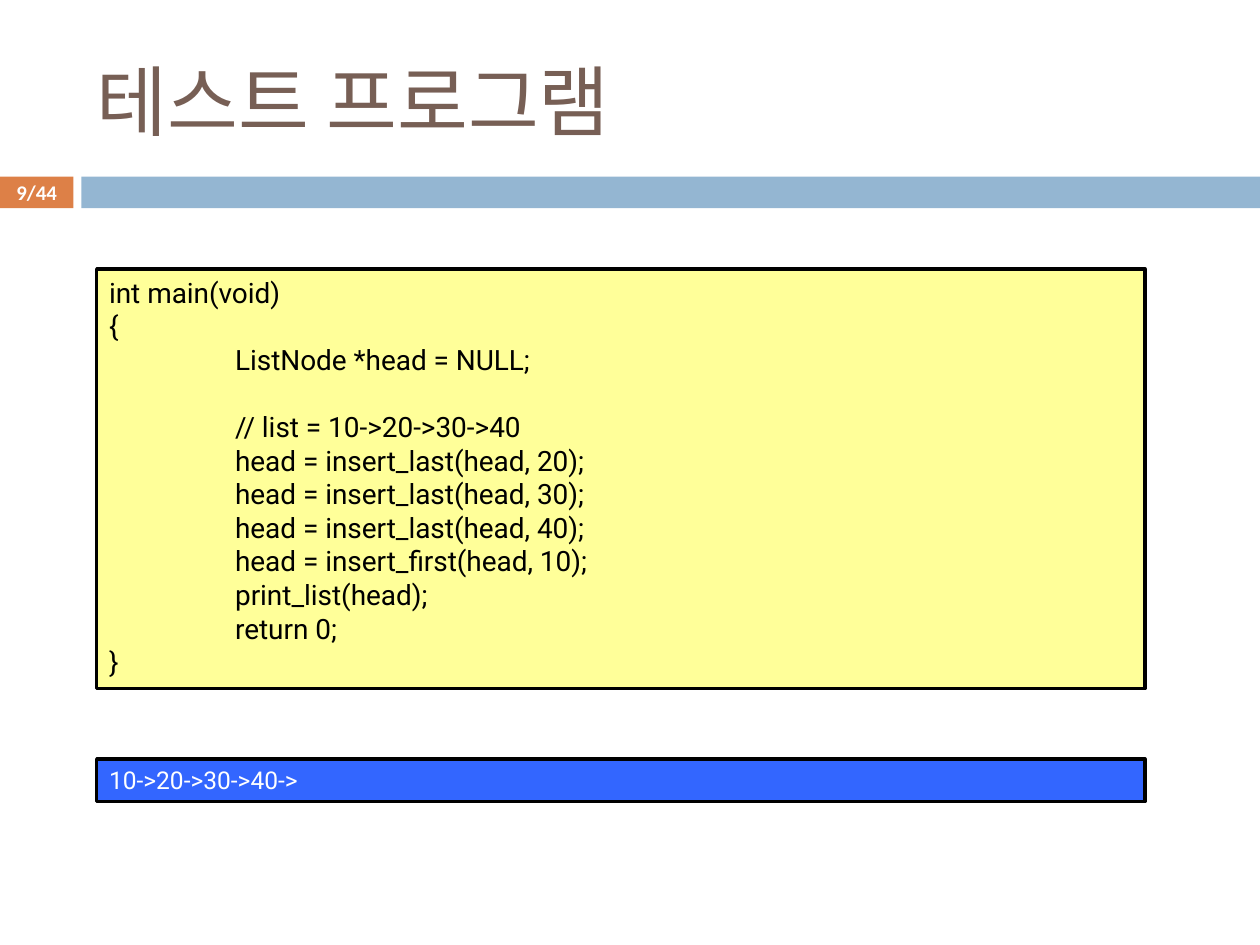
from lxml import etree
from pptx import Presentation
from pptx.dml.color import RGBColor
from pptx.enum.shapes import MSO_SHAPE
from pptx.enum.text import MSO_ANCHOR, PP_ALIGN
from pptx.oxml.ns import qn
from pptx.util import Cm, Pt

RECT = MSO_SHAPE.RECTANGLE
TOP, MIDDLE = MSO_ANCHOR.TOP, MSO_ANCHOR.MIDDLE
LEFT, CENTER, JUSTIFY = PP_ALIGN.LEFT, PP_ALIGN.CENTER, PP_ALIGN.JUSTIFY

# Content: the code is a list of blocks, set apart by one line of space
TITLE = "테스트 프로그램"
PAGE = "9/44"
CODE_BLOCKS = [
    ["int main(void)", "{", "\tListNode *head = NULL;"],
    [
        "\t// list = 10->20->30->40",
        "\thead = insert_last(head, 20);",
        "\thead = insert_last(head, 30);",
        "\thead = insert_last(head, 40);",
        "\thead = insert_first(head, 10);",
        "\tprint_list(head);",
        "\treturn 0;",
        "}",
    ],
]
OUTPUT = "10->20->30->40->"

THEME = {
    "heading_font": "Calibri", "code_font": "Roboto",
    "title": "775F55", "page": "DD8047", "band": "94B6D2",
    "code": "FFFF99", "output": "3366FF", "dark": "000000", "light": "FFFFFF",
    "title_size": 44, "code_size": 16, "output_size": 14, "page_size": 11.9,
    "border": 2, "code_gap": 19.2,
}

# Layout in centimetres
SLIDE_W, SLIDE_H = 25.4, 19.05
BAND_Y, BAND_H = 3.56, 0.64
PAGE_W, BAND_X = 1.48, 1.64
PANEL_X, PANEL_W = 1.95, 21.13
INSET_X, INSET_Y = 0.25, 0.13
CODE_TAB = 2.54


def color(key):
    return RGBColor.from_string(THEME[key])


def add_box(slide, x, y, w, h, fill, border=None):
    box = slide.shapes.add_shape(RECT, Cm(x), Cm(y), Cm(w), Cm(h))
    box.shadow.inherit = False
    box.fill.solid()
    box.fill.fore_color.rgb = color(fill)
    if border:
        box.line.color.rgb = color(border)
        box.line.width = Pt(THEME["border"])
    else:
        box.line.fill.background()
    return box


def add_tab_stop(paragraph, position):
    properties = paragraph._p.get_or_add_pPr()
    stops = etree.SubElement(properties, qn("a:tabLst"))
    etree.SubElement(stops, qn("a:tab"), pos=str(Cm(position)), algn="l")


def write(holder, blocks, *, font, size, ink, align=LEFT, anchor=TOP,
          bold=False, inset=(INSET_X, INSET_Y), gap=0):
    frame = holder.text_frame
    frame.word_wrap = True
    frame.vertical_anchor = anchor
    frame.margin_left = frame.margin_right = Cm(inset[0])
    frame.margin_top = frame.margin_bottom = Cm(inset[1])
    paragraph = frame.paragraphs[0]
    for b, block in enumerate(blocks):
        for n, line in enumerate(block):
            if b or n:
                paragraph = frame.add_paragraph()
            if b and n == 0:
                paragraph.space_before = Pt(gap)
            if "\t" in line:
                add_tab_stop(paragraph, CODE_TAB)
            paragraph.alignment = align
            run = paragraph.add_run()
            run.text = line
            run.font.name = THEME[font]
            run.font.size = Pt(THEME[size])
            run.font.bold = bold
            run.font.color.rgb = color(ink)


def main():
    deck = Presentation()
    deck.slide_width, deck.slide_height = Cm(SLIDE_W), Cm(SLIDE_H)
    slide = deck.slides.add_slide(deck.slide_layouts[6])

    # Title
    heading = slide.shapes.add_textbox(Cm(1.7), Cm(0.64), Cm(22.66), Cm(2.74))
    write(heading, [[TITLE]], font="heading_font", size="title_size",
          ink="title", anchor=MIDDLE)

    # Page number and band
    page = add_box(slide, 0, BAND_Y, PAGE_W, BAND_H, "page")
    write(page, [[PAGE]], font="heading_font", size="page_size", ink="light",
          align=CENTER, anchor=MIDDLE, bold=True, inset=(0, 0))
    add_box(slide, BAND_X, BAND_Y, SLIDE_W - BAND_X, BAND_H, "band")

    # Program and its output
    code = add_box(slide, PANEL_X, 5.42, PANEL_W, 8.46, "code", "dark")
    write(code, CODE_BLOCKS, font="code_font", size="code_size", ink="dark",
          align=JUSTIFY, gap=THEME["code_gap"])
    output = add_box(slide, PANEL_X, 15.3, PANEL_W, 0.86, "output", "dark")
    write(output, [[OUTPUT]], font="code_font", size="output_size", ink="light")

    deck.save("out.pptx")


if __name__ == "__main__":
    main()
